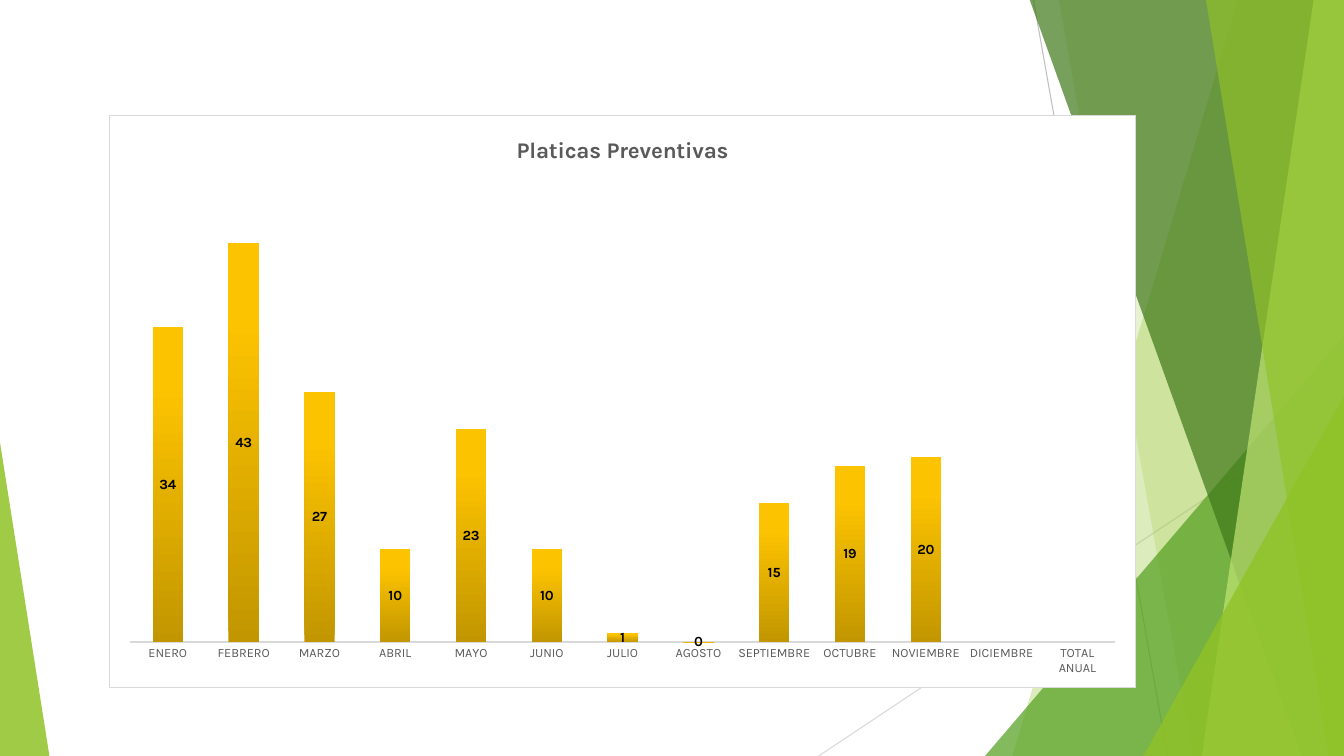
from lxml import etree
from pptx import Presentation
from pptx.chart.data import CategoryChartData
from pptx.dml.color import RGBColor
from pptx.enum.chart import XL_CHART_TYPE, XL_LABEL_POSITION, XL_TICK_MARK
from pptx.enum.shapes import MSO_CONNECTOR, MSO_SHAPE
from pptx.oxml import parse_xml
from pptx.oxml.ns import nsdecls, qn
from pptx.util import Inches, Pt

# Content
WIDE, HIGH, TOP = 13.33, 7.5, -0.01
FONT = "Karla"
TITLE = "Platicas Preventivas"
TALKS = [
    ("ENERO", 34), ("FEBRERO", 43), ("MARZO", 27), ("ABRIL", 10),
    ("MAYO", 23), ("JUNIO", 10), ("JULIO", 1), ("AGOSTO", 0),
    ("SEPTIEMBRE", 15), ("OCTUBRE", 19), ("NOVIEMBRE", 20),
    ("DICIEMBRE", None), ("TOTAL ANUAL", None),
]
GOLD = [(0, "C29600"), (80, "FCC300"), (100, "FDC400")]
FRAME = (1.08, 1.14, 10.19, 5.69)
PLOT = {"x": 0.02, "y": 0.11, "w": 0.96, "h": 0.81}  # shares of the chart

# Lines: start, end, colour
RAYS = [
    ((10.25, 0), (11.58, HIGH), "BFBFBF"),
    ((WIDE, 4.03), (8.12, HIGH), "D9D9D9"),
]
# Back to front. Band: left edge at top and at bottom. Peak: left, top, width, apex
FACETS = [
    ("band", (12.28, 10.04), "90C226", 30),
    ("band", (10.5, 11.83), "90C226", 20),
    ("peak", (9.77, 3.33, 3.56, 1), "54A021", 72),
    ("band", (10.21, 12.91), "3F7819", 70),
    ("band", (13.03, 11.92), "C0E474", 70),
    ("band", (11.96, 13.18), "90C226", 65),
    ("peak", (11.34, 3.93, 1.99, 1), "90C226", 80),
    ("peak", (0, 4.39, 0.49, 0), "90C226", 85),
]


def color(code):
    return RGBColor.from_string(code)


def style(font, size, code, bold=False):
    font.name, font.size, font.bold = FONT, Pt(size), bold
    font.color.rgb = color(code)


def paint(shape, code, alpha):
    shape.shadow.inherit = False
    shape.fill.solid()
    shape.fill.fore_color.rgb = color(code)
    shape.line.fill.background()
    tint = shape.fill._xPr.find(".//" + qn("a:srgbClr"))
    etree.SubElement(tint, qn("a:alpha")).set("val", str(alpha * 1000))


def band(shapes, top, base):
    pts = [(top, TOP), (WIDE, TOP), (WIDE, HIGH), (base, HIGH)]
    pts = [(Inches(x), Inches(y)) for x, y in pts]
    pen = shapes.build_freeform(*pts[0])
    pen.add_line_segments(pts[1:], close=True)
    return pen.convert_to_shape()


def peak(shapes, left, top, width, apex):
    box = [Inches(n) for n in (left, top, width, HIGH - top)]
    shape = shapes.add_shape(MSO_SHAPE.ISOSCELES_TRIANGLE, *box)
    shape.adjustments[0] = apex
    return shape


def backdrop(shapes):
    for start, end, code in RAYS:
        ends = [Inches(n) for n in start + end]
        ray = shapes.add_connector(MSO_CONNECTOR.STRAIGHT, *ends)
        ray.line.color.rgb = color(code)
        ray.line.width = Pt(0.75)
        etree.SubElement(ray._element.spPr, qn("a:effectLst"))
    draw = {"band": band, "peak": peak}
    for kind, place, code, alpha in FACETS:
        paint(draw[kind](shapes, *place), code, alpha)


def bars(shapes):
    data = CategoryChartData()
    data.categories = [month for month, _ in TALKS]
    data.add_series("Series 1", [count for _, count in TALKS])
    box = [Inches(n) for n in FRAME]
    chart = shapes.add_chart(XL_CHART_TYPE.COLUMN_STACKED, *box, data).chart
    style(chart.font, 10, "000000")
    chart.has_legend = False

    # Title
    chart.has_title = True
    run = chart.chart_title.text_frame.paragraphs[0].add_run()
    run.text = TITLE
    style(run.font, 16, "595959", True)
    chart.chart_title.include_in_layout = False

    # Axes
    months, scale = chart.category_axis, chart.value_axis
    months.major_tick_mark = XL_TICK_MARK.NONE
    style(months.tick_labels.font, 9, "595959")
    months.format.line.color.rgb = color("D9D9D9")
    months.format.line.width = Pt(1)
    scale.minimum_scale, scale.maximum_scale = 0, 50
    scale.has_major_gridlines = False
    scale.visible = False

    # Columns and labels
    plot = chart.plots[0]
    plot.gap_width, plot.overlap, plot.vary_by_categories = 150, 100, False
    row = plot.series[0]
    tags = row.data_labels
    tags.show_value = True
    tags.position = XL_LABEL_POSITION.CENTER
    style(tags.font, 10, "000000", True)
    stops = "".join(
        f'<a:gs pos="{at * 1000}"><a:srgbClr val="{code}"/></a:gs>'
        for at, code in GOLD)
    row.format.fill.background()
    blank = row._element.spPr.find(qn("a:noFill"))
    blank.getparent().replace(blank, parse_xml(
        f'<a:gradFill {nsdecls("a")}><a:gsLst>{stops}</a:gsLst>'
        '<a:lin ang="16200000" scaled="0"/></a:gradFill>'))

    # Plot area and frame
    area = chart._chartSpace.chart.plotArea
    for old in area.findall(qn("c:layout")):
        area.remove(old)
    sizes = "".join(f'<c:{key} val="{val}"/>' for key, val in PLOT.items())
    area.insert(0, parse_xml(
        f'<c:layout {nsdecls("c")}><c:manualLayout>'
        '<c:layoutTarget val="inner"/><c:xMode val="edge"/>'
        f'<c:yMode val="edge"/>{sizes}</c:manualLayout></c:layout>'))
    chart._chartSpace.chart.addnext(parse_xml(
        f'<c:spPr {nsdecls("c", "a")}>'
        '<a:solidFill><a:srgbClr val="FFFFFF"/></a:solidFill>'
        f'<a:ln w="{Pt(0.75)}"><a:solidFill><a:srgbClr val="D9D9D9"/>'
        '</a:solidFill></a:ln></c:spPr>'))


def main():
    deck = Presentation()
    deck.slide_width, deck.slide_height = Inches(WIDE), Inches(HIGH)
    slide = deck.slides.add_slide(deck.slide_layouts[6])
    backdrop(slide.shapes)
    bars(slide.shapes)
    deck.save("out.pptx")


if __name__ == "__main__":
    main()
